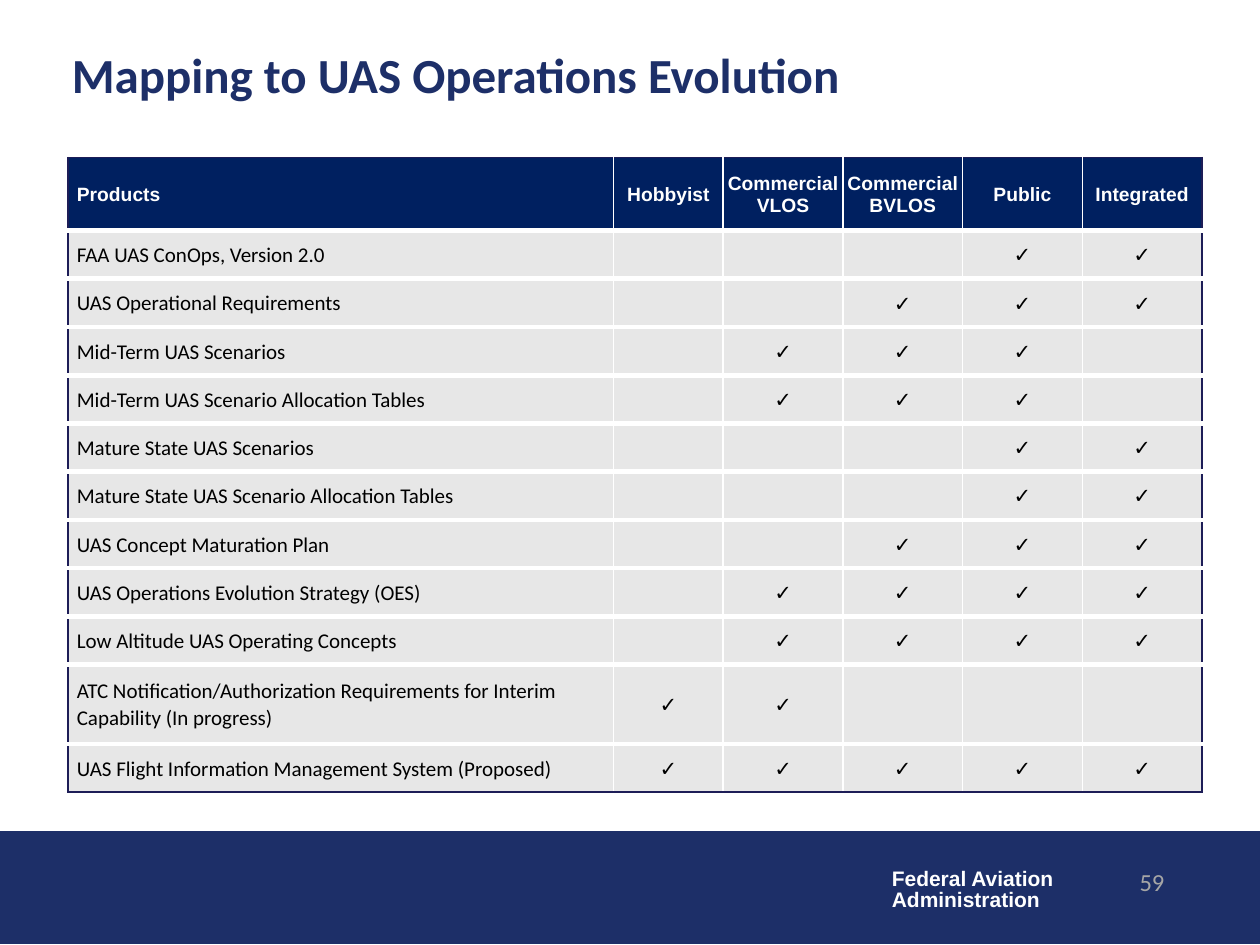
from pptx import Presentation
from pptx.dml.color import RGBColor
from pptx.enum.shapes import MSO_SHAPE
from pptx.enum.text import MSO_ANCHOR, MSO_AUTO_SIZE, PP_ALIGN
from pptx.oxml.ns import qn
from pptx.util import Inches, Pt
from lxml.etree import SubElement

NAVY = RGBColor(0x1D, 0x2F, 0x68)
HEADER = RGBColor(0x00, 0x20, 0x60)
EDGE = RGBColor(0x1D, 0x1D, 0x57)
ROW = RGBColor(0xE7, 0xE7, 0xE7)
GRAY = RGBColor(0xA6, 0xA6, 0xA6)
WHITE = RGBColor(0xFF, 0xFF, 0xFF)
BLACK = RGBColor(0x00, 0x00, 0x00)

TITLE_FONT = {"name": "Calibri", "size": Pt(28), "bold": True}
AGENCY_FONT = {"name": "Arial", "size": Pt(12), "bold": True}
NUMBER_FONT = {"name": "Calibri", "size": Pt(14)}
HEAD_FONT = {"name": "Arial", "size": Pt(11), "bold": True}
PRODUCT_FONT = {"name": "Calibri", "size": Pt(12), "bold": False}
TICK_FONT = {"name": "Arial", "size": Pt(12), "bold": False}

COLUMNS = ["Products", "Hobbyist", "Commercial VLOS", "Commercial BVLOS",
           "Public", "Integrated"]
COL_WIDTHS = [4.33, 0.87] + [0.95] * 4

# Each product with the numbers of its ticked columns
PRODUCTS = [
    ("FAA UAS ConOps, Version 2.0", {4, 5}),
    ("UAS Operational Requirements", {3, 4, 5}),
    ("Mid-Term UAS Scenarios", {2, 3, 4}),
    ("Mid-Term UAS Scenario Allocation Tables", {2, 3, 4}),
    ("Mature State UAS Scenarios", {4, 5}),
    ("Mature State UAS Scenario Allocation Tables", {4, 5}),
    ("UAS Concept Maturation Plan", {3, 4, 5}),
    ("UAS Operations Evolution Strategy (OES)", {2, 3, 4, 5}),
    ("Low Altitude UAS Operating Concepts", {2, 3, 4, 5}),
    ("ATC Notification/Authorization Requirements for Interim "
     "Capability (In progress)", {1, 2}),
    ("UAS Flight Information Management System (Proposed)", {1, 2, 3, 4, 5}),
]
TABLE_HEIGHT = 5.04
HEAD_HEIGHT = 0.58
TALL_ROW, TALL_HEIGHT = 10, 0.63


def format_font(font, values, color):
    for name, value in values.items():
        setattr(font, name, value)
    font.color.rgb = color


def add_title(s, text):
    sp = s.shapes.title
    sp.left, sp.top, sp.width, sp.height = map(Inches, (0.47, 0.25, 9.27, 0.67))
    tf = sp.text_frame
    tf.auto_size = MSO_AUTO_SIZE.NONE
    tf.vertical_anchor = MSO_ANCHOR.MIDDLE
    p = tf.paragraphs[0]
    p.alignment = PP_ALIGN.LEFT
    r = p.add_run()
    r.text = text
    format_font(r.font, TITLE_FONT, NAVY)


def add_band(s):
    sp = s.shapes.add_shape(MSO_SHAPE.RECTANGLE, 0, Inches(6.6),
                            Inches(10), Inches(0.89))
    sp.shadow.inherit = False
    sp.fill.solid()
    sp.fill.fore_color.rgb = NAVY
    sp.line.color.rgb = NAVY
    sp.line.width = Pt(0.75)


def add_text(s, box, lines, values, color, wrap=True, **para_format):
    tf = s.shapes.add_textbox(*map(Inches, box)).text_frame
    tf.word_wrap = wrap
    for i, line in enumerate(lines):
        p = tf.paragraphs[0] if i == 0 else tf.add_paragraph()
        for name, value in para_format.items():
            setattr(p, name, value)
        r = p.add_run()
        r.text = line
        format_font(r.font, values, color)


def set_borders(cell, borders):
    tcPr = cell._tc.get_or_add_tcPr()
    for side in "LRTB":
        color, width = borders[side]
        ln = SubElement(tcPr, qn(f"a:ln{side}"), w=str(Pt(width)))
        fill = SubElement(ln, qn("a:solidFill"))
        SubElement(fill, qn("a:srgbClr"), val=str(color))


def fill_cell(cell, text, values, color, fill, inset, align, after):
    cell.margin_left = cell.margin_right = Inches(inset)
    cell.margin_top = cell.margin_bottom = 0
    cell.vertical_anchor = MSO_ANCHOR.MIDDLE
    cell.fill.solid()
    cell.fill.fore_color.rgb = fill
    p = cell.text_frame.paragraphs[0]
    p.alignment = align
    p.line_spacing = 1.07
    p.space_after = Pt(after)
    format_font(p.font, values, color)
    if text:
        r = p.add_run()
        r.text = text
        format_font(r.font, values, color)


def add_product_table(s):
    rows = [COLUMNS] + [
        [name] + ["✓" if c in ticks else "" for c in range(1, len(COLUMNS))]
        for name, ticks in PRODUCTS]
    last_row, last_col = len(rows) - 1, len(COLUMNS) - 1
    table = s.shapes.add_table(len(rows), len(COLUMNS), Inches(0.54), Inches(1.25),
                               Inches(sum(COL_WIDTHS)), Inches(TABLE_HEIGHT)).table
    table.first_row = table.horz_banding = False
    for column, width in zip(table.columns, COL_WIDTHS):
        column.width = Inches(width)

    # Plain rows share what the header and the two-line row leave over
    plain = (TABLE_HEIGHT - HEAD_HEIGHT - TALL_HEIGHT) / (len(rows) - 2)
    heights = {0: HEAD_HEIGHT, TALL_ROW: TALL_HEIGHT}

    for i, texts in enumerate(rows):
        table.rows[i].height = Inches(heights.get(i, plain))
        for j, text in enumerate(texts):
            cell = table.cell(i, j)
            set_borders(cell, {
                "L": (EDGE if j == 0 else WHITE, 1),
                "R": (EDGE if j == last_col else WHITE, 1),
                "T": (EDGE, 1) if i == 0 else (WHITE, 3),
                "B": (EDGE, 1) if i == last_row else (WHITE, 3)})
            align = PP_ALIGN.LEFT if j == 0 else PP_ALIGN.CENTER
            if i == 0:
                fill_cell(cell, text, HEAD_FONT, WHITE, HEADER,
                          0.07 if j == 0 else 0, align, 0)
            elif j == 0:
                fill_cell(cell, text, PRODUCT_FONT, BLACK, ROW, 0.07, align, 3)
            else:
                fill_cell(cell, text, TICK_FONT, BLACK, ROW, 0.07, align, 6)


def main():
    prs = Presentation()
    prs.slide_width, prs.slide_height = Inches(10), Inches(7.5)
    s = prs.slides.add_slide(prs.slide_layouts[5])

    # Footer band with agency name and page number
    add_band(s)
    add_text(s, (6.98, 6.85, 1.5, 0.44), ["Federal Aviation", "Administration"],
             AGENCY_FONT, WHITE, wrap=False, line_spacing=0.85)
    add_text(s, (7.26, 6.83, 2.08, 0.5), ["59"], NUMBER_FONT, GRAY,
             alignment=PP_ALIGN.RIGHT)

    # Title and table
    add_title(s, "Mapping to UAS Operations Evolution")
    add_product_table(s)
    prs.save("out.pptx")


if __name__ == "__main__":
    main()
